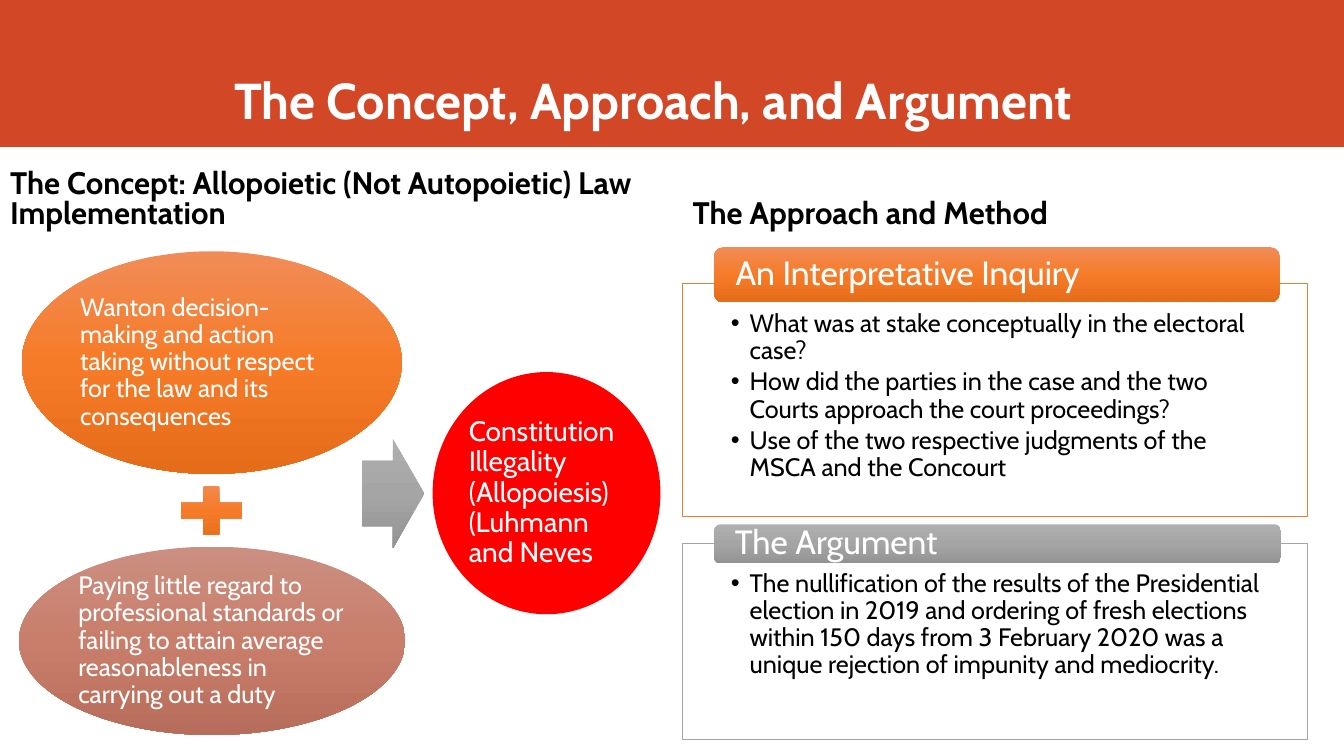
from copy import deepcopy

from lxml.etree import SubElement
from pptx import Presentation
from pptx.dml.color import RGBColor
from pptx.enum.shapes import MSO_SHAPE as Preset
from pptx.enum.text import MSO_ANCHOR as Anchor, MSO_AUTO_SIZE as AutoSize, PP_ALIGN as Align
from pptx.oxml.ns import qn
from pptx.util import Pt

ORANGE = ("F18C57", "F67B28", "E56C19")
CLAY = ("CB8F81", "C97E6B", "B76D5B")
GREY = ("AFAFAF", "A5A5A5", "939393")


def color(hex_code):
    return RGBColor.from_string(hex_code)


class SlideBuilder:
    font = "Cabin"
    light = "FFFFFF"
    dark = "000000"

    def __init__(self, slide):
        self.slide = slide

    def place(self, shape, box):
        shape.left, shape.top, shape.width, shape.height = (Pt(v) for v in box)

    def set_text(self, shape, text, size, ink, bold=False, align=Align.LEFT, anchor=Anchor.MIDDLE,
                 insets=(2, 2, 2, 2), leading=0.9, before=0, after=0):
        frame = shape.text_frame
        frame.text = text
        frame.word_wrap = True
        frame.auto_size = AutoSize.NONE
        frame.vertical_anchor = anchor
        (frame.margin_left, frame.margin_top,
         frame.margin_right, frame.margin_bottom) = (Pt(v) for v in insets)
        for paragraph in frame.paragraphs:
            paragraph.alignment = align
            paragraph.line_spacing = leading
            paragraph.space_before = Pt(before)
            paragraph.space_after = Pt(after)
            for run in paragraph.runs:
                run.font.name = self.font
                run.font.size = Pt(size)
                run.font.bold = bold
                run.font.color.rgb = color(ink)

    def paint(self, shape, fill):
        if isinstance(fill, str):
            shape.fill.solid()
            shape.fill.fore_color.rgb = color(fill)
            return
        shape.fill.gradient()
        shape.fill.gradient_angle = 270
        stop_list = shape._element.spPr.find(qn("a:gradFill")).find(qn("a:gsLst"))
        stop_list.append(deepcopy(stop_list[0]))
        for stop, hex_code, position in zip(shape.fill.gradient_stops, fill, (0, 0.5, 1)):
            stop.color.rgb = color(hex_code)
            stop.position = position

    def shape(self, preset, box, fill):
        shape = self.slide.shapes.add_shape(preset, *(Pt(v) for v in box))
        shape.shadow.inherit = False
        shape.line.fill.background()
        self.paint(shape, fill)
        return shape

    def band(self, box, fill):
        band = self.shape(Preset.RECTANGLE, box, fill)
        self.slide.shapes._spTree.insert(2, band._element)

    def title(self, text, box):
        title = self.slide.shapes.title
        self.place(title, box)
        self.set_text(title, text, 36, self.light, bold=True, align=Align.CENTER,
                      anchor=Anchor.BOTTOM, insets=(7.2, 3.6, 7.2, 3.6), leading=1)

    def heading(self, index, text, box):
        heading = self.slide.placeholders[index]
        self.place(heading, box)
        self.set_text(heading, text, 22.2, self.dark, bold=True, anchor=Anchor.BOTTOM,
                      insets=(7.2, 3.6, 7.2, 3.6), leading=0.8, before=6.7)

    def bullets(self, index, points, box, border):
        panel = self.slide.placeholders[index]
        self.place(panel, box)
        self.paint(panel, self.light)
        panel.line.color.rgb = color(border)
        panel.line.width = Pt(0.5)
        self.set_text(panel, "\n".join(points), 18, self.dark, anchor=Anchor.TOP,
                      insets=(34.5, 19.5, 34.5, 10), after=2.7)
        for paragraph in panel.text_frame.paragraphs:
            properties = paragraph._p.get_or_add_pPr()
            properties.set("marL", str(Pt(13.5)))
            properties.set("indent", str(Pt(-13.5)))
            SubElement(properties, qn("a:buChar")).set("char", "•")

    def label(self, text, box, fill):
        label = self.shape(Preset.ROUNDED_RECTANGLE, box, fill)
        self.set_text(label, text, 24, self.light, insets=(13.5, 0, 13.5, 0))

    def oval(self, text, size, box, fill):
        self.set_text(self.shape(Preset.OVAL, box, fill), text, size, self.light)


def main():
    deck = Presentation()
    deck.slide_width, deck.slide_height = Pt(960), Pt(540)
    build = SlideBuilder(deck.slides.add_slide(deck.slide_layouts[4]))

    build.band((0, 0, 960, 105), "D24726")
    build.title("The Concept, Approach, and Argument", (44, 17.5, 845, 79))
    build.heading(1, "The Concept: Allopoietic (Not Autopoietic) Law Implementation",
                  (0, 117.5, 471.5, 50.5))
    build.heading(3, "The Approach and Method", (487.5, 117.5, 406, 50.5))

    build.oval("Wanton decision-making and action taking without respect for the law "
               "and its consequences", 18, (15.5, 179.5, 271.5, 159), ORANGE)
    build.shape(Preset.MATH_PLUS, (121.5, 341.5, 59, 46.5), ORANGE)
    build.oval("Paying little regard to professional standards or failing to attain average "
               "reasonableness in carrying out a duty", 18, (13.5, 390.5, 276, 134.5), CLAY)
    arrow = build.shape(Preset.RIGHT_ARROW, (258.5, 313.5, 44.5, 78), GREY)
    arrow.adjustments[0] = 0.6
    build.oval("Constitution Illegality (Allopoiesis) (Luhmann and Neves", 20,
               (309, 265.75, 162.75, 173), "FF0000")

    build.bullets(2, ["What was at stake conceptually in the electoral case?",
                      "How did the parties in the case and the two Courts approach "
                      "the court proceedings?",
                      "Use of the two respective judgments of the MSCA and the Concourt"],
                  (487.5, 202.5, 446.5, 166.5), "ED7D31")
    build.label("An Interpretative Inquiry", (510, 176.5, 404, 39.5), ORANGE)
    build.bullets(4, ["The nullification of the results of the Presidential election in 2019 "
                      "and ordering of fresh elections within 150 days from 3 February 2020 "
                      "was a unique rejection of impunity and mediocrity."],
                  (487.5, 388, 446.5, 140), "A5A5A5")
    build.label("The Argument", (510, 374.5, 405, 28), GREY)

    deck.save("out.pptx")


if __name__ == "__main__":
    main()
